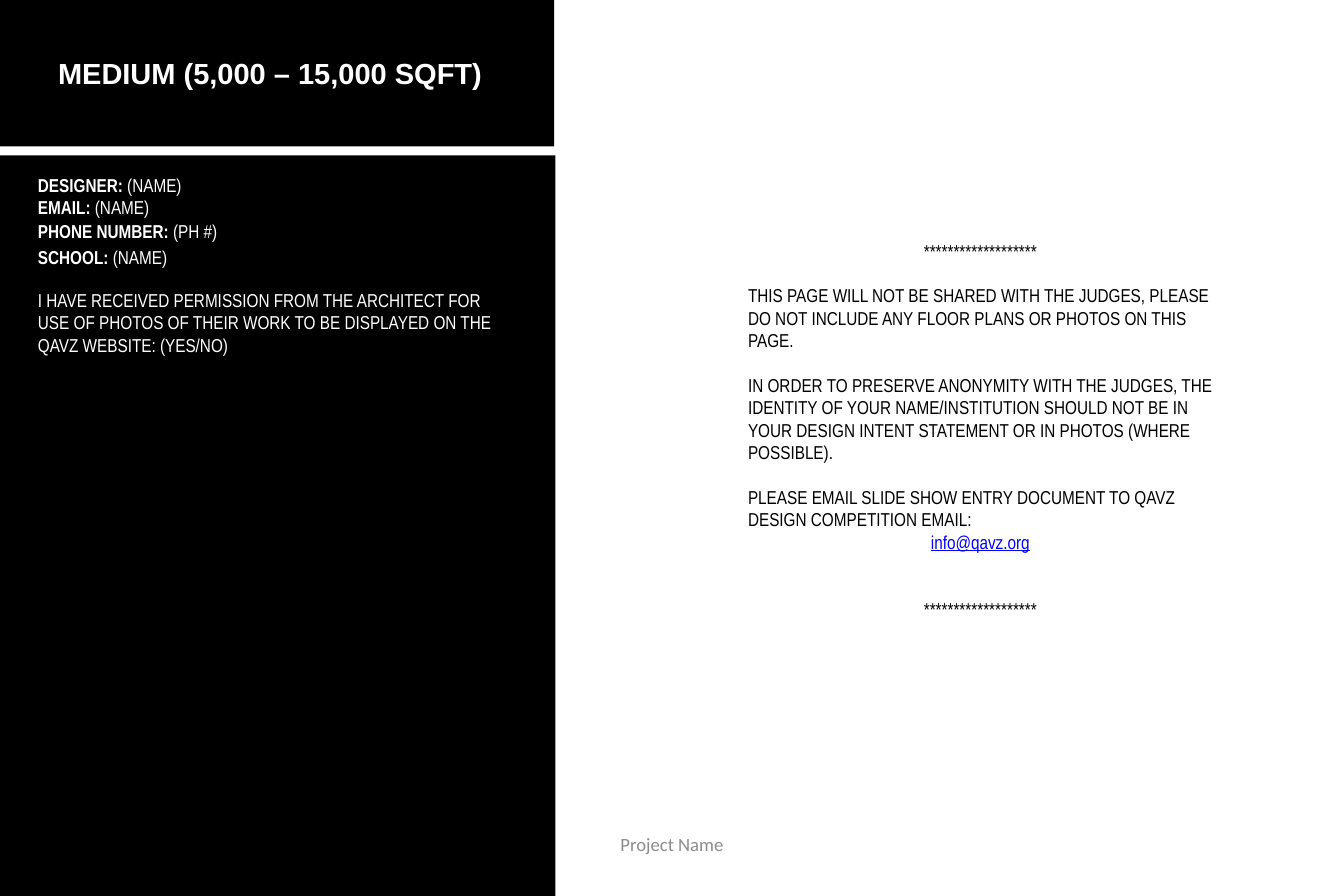
from dataclasses import dataclass

from pptx import Presentation
from pptx.dml.color import RGBColor
from pptx.enum.shapes import MSO_SHAPE
from pptx.enum.text import MSO_ANCHOR, MSO_AUTO_SIZE, PP_ALIGN
from pptx.slide import Slide
from pptx.text.text import TextFrame
from pptx.util import Emu, Pt

PX = 9144  # EMU per px, 100 px to the inch

BLACK = RGBColor(0x00, 0x00, 0x00)
WHITE = RGBColor(0xFF, 0xFF, 0xFF)
GREY = RGBColor(0x8C, 0x8C, 0x8C)
LINK_BLUE = RGBColor(0x00, 0x00, 0xFF)

BODY_FONT = "Arial Narrow"
LINE = 21.5  # height of one body line in points
STARS = "*" * 19


@dataclass(frozen=True)
class Box:
    left: int
    top: int
    width: int
    height: int

    def emu(self) -> tuple[Emu, ...]:
        return tuple(Emu(v * PX) for v in (self.left, self.top, self.width, self.height))


@dataclass(frozen=True)
class Line:
    text: str
    color: RGBColor = BLACK
    label: str = ""
    font: str = BODY_FONT
    size: int = 18
    bold: bool = False
    underline: bool = False
    align: PP_ALIGN = PP_ALIGN.LEFT
    lines_before: int = 0


PANELS = [Box(0, 0, 742, 196), Box(0, 208, 744, 992)]

TITLE_BOX = Box(19, 69, 685, 57)
TITLE = Line("MEDIUM (5,000 – 15,000 SQFT)", WHITE, font="Arial", size=28,
             bold=True, align=PP_ALIGN.CENTER)

CONTACT_DETAILS = [
    (228, "DESIGNER: ", "(NAME)"),
    (258, "EMAIL: ", "(NAME)"),
    (289, "PHONE NUMBER: ", "(PH #)"),
    (325, "SCHOOL: ", "(NAME)"),
]

PERMISSION = Line("I HAVE RECEIVED PERMISSION FROM THE ARCHITECT FOR USE OF PHOTOS OF THEIR "
                  "WORK TO BE DISPLAYED ON THE QAVZ WEBSITE: (YES/NO)", WHITE)

INSTRUCTIONS = [
    Line(STARS, align=PP_ALIGN.CENTER),
    Line("THIS PAGE WILL NOT BE SHARED WITH THE JUDGES, PLEASE DO NOT INCLUDE ANY "
         "FLOOR PLANS OR PHOTOS ON THIS PAGE.", lines_before=1),
    Line("IN ORDER TO PRESERVE ANONYMITY WITH THE JUDGES, THE IDENTITY OF YOUR "
         "NAME/INSTITUTION SHOULD NOT BE IN YOUR DESIGN INTENT STATEMENT OR IN PHOTOS "
         "(WHERE POSSIBLE).", lines_before=1),
    Line("PLEASE EMAIL SLIDE SHOW ENTRY DOCUMENT TO QAVZ DESIGN COMPETITION EMAIL:",
         lines_before=1),
    Line("info@qavz.org", LINK_BLUE, underline=True, align=PP_ALIGN.CENTER),
    Line(STARS, align=PP_ALIGN.CENTER, lines_before=2),
]

PROJECT_NAME = Line("Project Name", GREY, font="Calibri", align=PP_ALIGN.CENTER)


def write_lines(frame: TextFrame, lines: list[Line]) -> None:
    frame.word_wrap = True
    frame.auto_size = MSO_AUTO_SIZE.NONE
    frame.vertical_anchor = MSO_ANCHOR.TOP
    for index, line in enumerate(lines):
        paragraph = frame.add_paragraph() if index else frame.paragraphs[0]
        paragraph.alignment = line.align
        paragraph.space_before = Pt(line.lines_before * LINE)
        font = paragraph.font
        font.name, font.size, font.bold = line.font, Pt(line.size), line.bold
        font.underline = line.underline
        font.color.rgb = line.color
        if line.label:
            label = paragraph.add_run()
            label.text = line.label
            label.font.bold = True
        paragraph.add_run().text = line.text


def add_text(slide: Slide, box: Box, lines: list[Line]) -> TextFrame:
    frame = slide.shapes.add_textbox(*box.emu()).text_frame
    write_lines(frame, lines)
    return frame


def add_panel(slide: Slide, box: Box) -> None:
    panel = slide.shapes.add_shape(MSO_SHAPE.RECTANGLE, *box.emu())
    panel.shadow.inherit = False
    panel.fill.solid()
    panel.fill.fore_color.rgb = BLACK
    panel.line.fill.background()


def main() -> None:
    prs = Presentation()
    prs.slide_width, prs.slide_height = Emu(1800 * PX), Emu(1200 * PX)
    slide = prs.slides.add_slide(prs.slide_layouts[5])

    # Black panels on the left
    for box in PANELS:
        add_panel(slide, box)

    # Title, raised above its panel
    title = slide.shapes.title
    title.left, title.top, title.width, title.height = TITLE_BOX.emu()
    write_lines(title.text_frame, [TITLE])
    slide.shapes._spTree.append(title._element)

    # Contact details and photo permission
    for top, label, value in CONTACT_DETAILS:
        add_text(slide, Box(41, top, 642, 40), [Line(value, WHITE, label)])
    add_text(slide, Box(41, 382, 642, 101), [PERMISSION])

    # Instructions for entrants
    add_text(slide, Box(992, 316, 642, 555), INSTRUCTIONS)

    # Project name at the foot
    footer = add_text(slide, Box(612, 1116, 576, 60), [PROJECT_NAME])
    footer.margin_left = footer.margin_right = footer.margin_top = footer.margin_bottom = 0

    prs.save("out.pptx")


if __name__ == "__main__":
    main()
